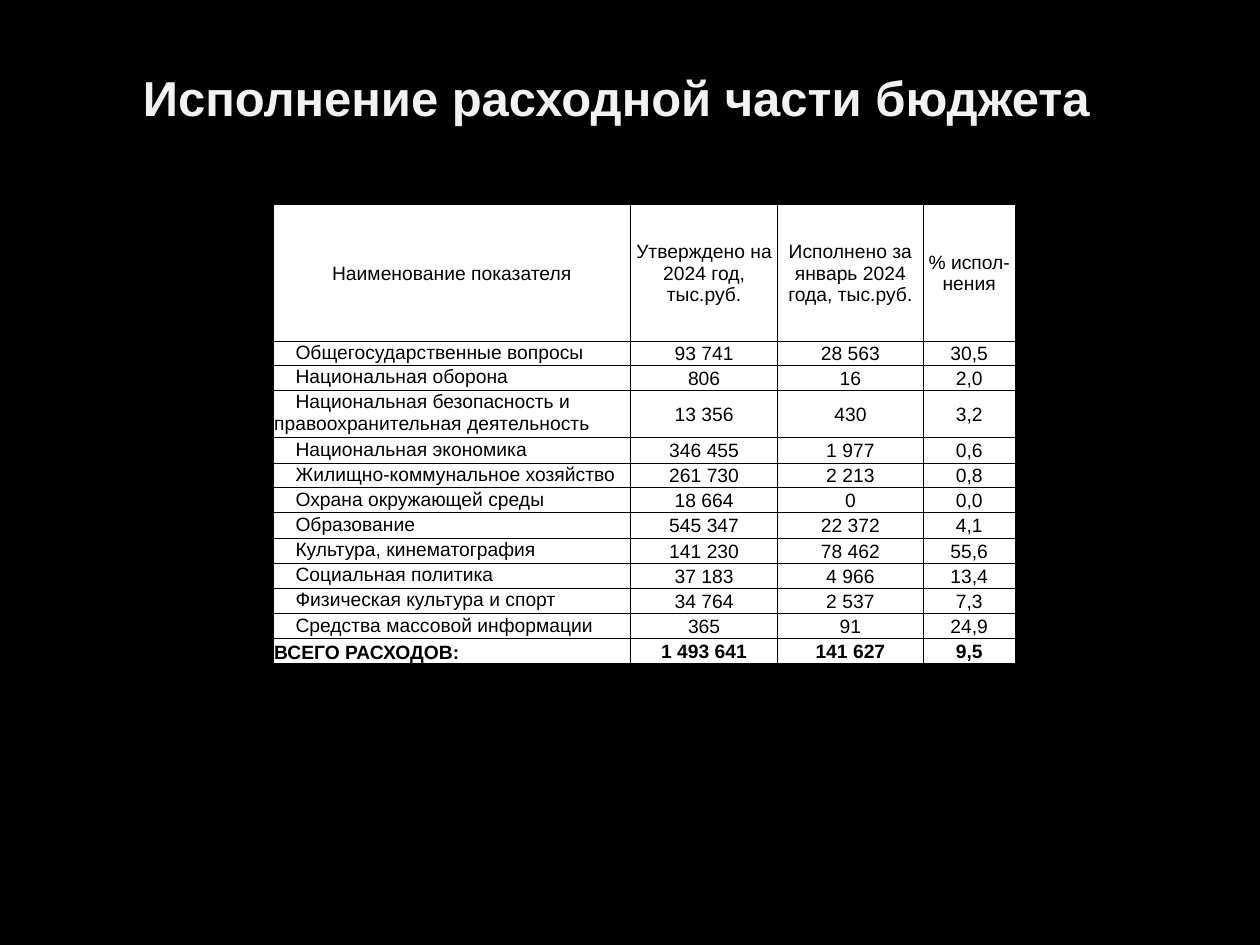
"""Build a slide with a table of budget spending by section."""
from lxml.etree import SubElement
from pptx import Presentation
from pptx.dml.color import RGBColor
from pptx.enum.text import MSO_ANCHOR as Anchor, PP_ALIGN as Align
from pptx.oxml.ns import qn
from pptx.util import Pt

FONT = "Arial"
BLACK, WHITE, TITLE_COLOR = "000000", "FFFFFF", "F2F2F2"
TITLE = "Исполнение расходной части бюджета"
HEADER = (
    "Наименование показателя",
    "Утверждено на 2024 год, тыс.руб.",
    "Исполнено за январь 2024 года, тыс.руб.",
    "% испол-нения",
)
SECTIONS = [
    ("Общегосударственные вопросы", "93 741", "28 563", "30,5"),
    ("Национальная оборона", "806", "16", "2,0"),
    ("Национальная безопасность и правоохранительная деятельность", "13 356", "430", "3,2"),
    ("Национальная экономика", "346 455", "1 977", "0,6"),
    ("Жилищно-коммунальное хозяйство", "261 730", "2 213", "0,8"),
    ("Охрана окружающей среды", "18 664", "0", "0,0"),
    ("Образование", "545 347", "22 372", "4,1"),
    ("Культура, кинематография", "141 230", "78 462", "55,6"),
    ("Социальная политика", "37 183", "4 966", "13,4"),
    ("Физическая культура и спорт", "34 764", "2 537", "7,3"),
    ("Средства массовой информации", "365", "91", "24,9"),
]
TOTAL = ("ВСЕГО РАСХОДОВ:", "1 493 641", "141 627", "9,5")
ROWS = [HEADER, *SECTIONS, TOTAL]
COLUMN_WIDTHS = (204.4, 84, 83.2, 52.6)
ROW_HEIGHTS = (77.8, 12.6, 14.3, 25.1, 14.6, 14, 14.3, 14.6, 14.3, 14.3, 14.6, 12.6, 14.6)
TABLE_LEFT, TABLE_TOP = 156, 117
SECTION_INDENT = 12.2


def color(value):
    return RGBColor.from_string(value)


def set_font(paragraph, size, value, bold):
    font = paragraph.font
    font.name, font.size, font.bold = FONT, Pt(size), bold
    font.color.rgb = color(value)


def add_borders(cell, value, width):
    properties = cell._tc.get_or_add_tcPr()
    for index, side in enumerate(("lnL", "lnR", "lnT", "lnB")):
        line = SubElement(properties, qn(f"a:{side}"), w=str(Pt(width)))
        fill = SubElement(line, qn("a:solidFill"))
        SubElement(fill, qn("a:srgbClr"), val=value)
        properties.insert(index, line)


def fill_cell(cell, text, row, column):
    is_total = row == len(ROWS) - 1
    is_label = column == 0 and row > 0
    cell.text = text
    cell.margin_left = cell.margin_top = cell.margin_right = Pt(0.7)
    cell.margin_bottom = 0
    cell.fill.solid()
    cell.fill.fore_color.rgb = color(WHITE)
    add_borders(cell, BLACK, 0.5)
    paragraph = cell.text_frame.paragraphs[0]
    set_font(paragraph, 11, BLACK, is_total)
    if not is_label:
        cell.vertical_anchor = Anchor.MIDDLE
        paragraph.alignment = Align.CENTER
        return
    cell.vertical_anchor = Anchor.BOTTOM if is_total else Anchor.TOP
    paragraph.alignment = Align.LEFT
    if not is_total:
        paragraph._p.get_or_add_pPr().set("indent", str(Pt(SECTION_INDENT)))


def add_title(slide):
    box = slide.shapes.add_textbox(Pt(36), Pt(21), Pt(648), Pt(69))
    frame = box.text_frame
    frame.word_wrap = True
    frame.vertical_anchor = Anchor.MIDDLE
    frame.margin_right = Pt(22.8)
    frame.text = TITLE
    paragraph = frame.paragraphs[0]
    paragraph.alignment = Align.CENTER
    set_font(paragraph, 28, TITLE_COLOR, True)


def add_budget_table(slide):
    table = slide.shapes.add_table(
        len(ROWS), len(HEADER), Pt(TABLE_LEFT), Pt(TABLE_TOP),
        Pt(sum(COLUMN_WIDTHS)), Pt(sum(ROW_HEIGHTS)),
    ).table
    table.first_row = table.horz_banding = False
    for column, width in zip(table.columns, COLUMN_WIDTHS):
        column.width = Pt(width)
    for row, height in zip(table.rows, ROW_HEIGHTS):
        row.height = Pt(height)
    for row, texts in enumerate(ROWS):
        for column, text in enumerate(texts):
            fill_cell(table.cell(row, column), text, row, column)


def main():
    presentation = Presentation()
    presentation.slide_width, presentation.slide_height = Pt(720), Pt(540)
    slide = presentation.slides.add_slide(presentation.slide_layouts[6])
    background = slide.background.fill
    background.solid()
    background.fore_color.rgb = color(BLACK)
    add_title(slide)
    add_budget_table(slide)
    presentation.save("out.pptx")


if __name__ == "__main__":
    main()
